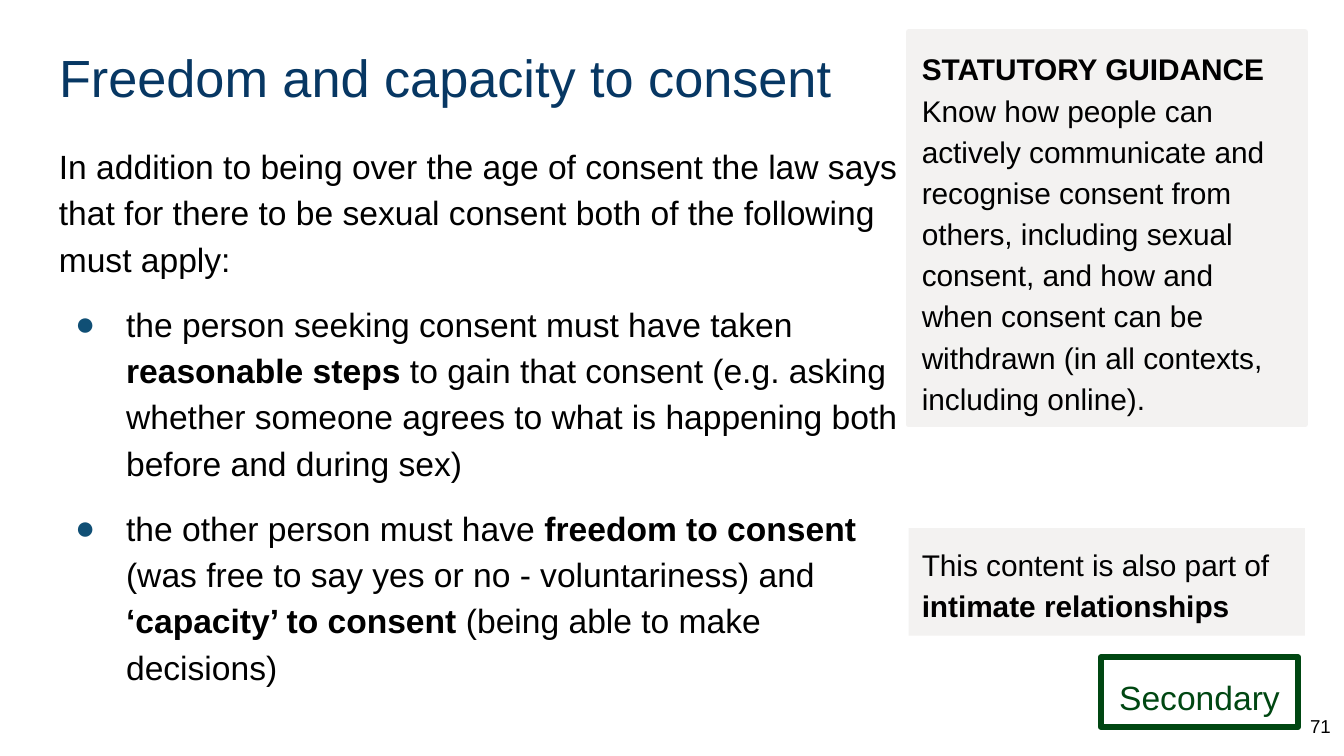
from dataclasses import dataclass

from lxml import etree
from pptx import Presentation
from pptx.dml.color import RGBColor
from pptx.enum import shapes, text
from pptx.oxml import ns
from pptx.util import Inches, Pt

FONT = "Arial"
BLACK, NAVY, BLUE = "000000", "073763", "104F75"
GREY, GREEN = "F3F2F1", "004712"
LEFT, CENTER, RIGHT = text.PP_ALIGN.LEFT, text.PP_ALIGN.CENTER, text.PP_ALIGN.RIGHT


@dataclass
class Para:
    runs: list[tuple[str, bool]]  # wording, bold; a final newline breaks the line
    bullet: bool = False


@dataclass
class Panel:
    box: tuple[float, float, float, float]
    paras: list[Para]
    size: int = 16
    color: str = BLACK
    fill: str | None = None
    line: str | None = None
    align: text.PP_ALIGN = LEFT


def rgb(value: str) -> RGBColor:
    return RGBColor.from_string(value)


def place(sp, box) -> None:
    sp.left, sp.top, sp.width, sp.height = map(Inches, box)


def add_bullet(p) -> None:
    pPr = p._p.get_or_add_pPr()
    pPr.set("marL", str(Inches(0.5)))
    pPr.set("indent", str(-Inches(0.38)))
    color = etree.SubElement(pPr, ns.qn("a:buClr"))
    etree.SubElement(color, ns.qn("a:srgbClr"), val=BLUE)
    etree.SubElement(pPr, ns.qn("a:buFont"), typeface=FONT)
    etree.SubElement(pPr, ns.qn("a:buChar"), char="●")


def write(tf, paras: list[Para], *, size: int, color: str = BLACK,
          align=LEFT, anchor=text.MSO_ANCHOR.TOP, spacing: float = 1.15) -> None:
    tf.word_wrap = True
    tf.auto_size = text.MSO_AUTO_SIZE.NONE
    tf.vertical_anchor = anchor
    tf.margin_left = tf.margin_top = tf.margin_right = tf.margin_bottom = Inches(0.1)
    for i, para in enumerate(paras):
        p = tf.add_paragraph() if i else tf.paragraphs[0]
        p.alignment = align
        p.line_spacing = spacing
        p.space_before = Pt(10 if para.bullet else 0)
        if para.bullet:
            add_bullet(p)
        for wording, bold in para.runs:
            r = p.add_run()
            r.text = wording.rstrip("\n")
            r.font.name, r.font.size, r.font.bold = FONT, Pt(size), bold
            r.font.color.rgb = rgb(color)
            if wording.endswith("\n"):
                p.add_line_break()


def add_text(s, box, paras: list[Para], **fmt) -> None:
    sp = s.shapes.add_textbox(*map(Inches, box))
    write(sp.text_frame, paras, **fmt)


def add_panel(s, panel: Panel) -> None:
    sp = s.shapes.add_shape(shapes.MSO_SHAPE.RECTANGLE, *map(Inches, panel.box))
    sp.shadow.inherit = False
    if panel.fill:
        sp.fill.solid()
        sp.fill.fore_color.rgb = rgb(panel.fill)
    else:
        sp.fill.background()
    if panel.line:
        sp.line.color.rgb = rgb(panel.line)
        sp.line.width = Pt(3)
    else:
        sp.line.fill.background()
    write(sp.text_frame, panel.paras, size=panel.size, color=panel.color, align=panel.align)


BODY = [
    Para([("In addition to being over the age of consent the law says that for there "
           "to be sexual consent both of the following must apply:", False)]),
    Para([("the person seeking consent must have taken ", False),
          ("reasonable steps ", True),
          ("to gain that consent (e.g. asking whether someone agrees to what is "
           "happening both before and during sex)", False)], bullet=True),
    Para([("the other person must have ", False),
          ("freedom to consent ", True),
          ("(was free to say yes or no - voluntariness) and", False),
          (" ‘capacity’ to consent ", True),
          ("(being able to make decisions)", False)], bullet=True),
]

PANELS = [
    Panel((6.76, 0.24, 2.95, 2.92), [
        Para([("STATUTORY GUIDANCE \n", True),
              ("Know how people can actively communicate and recognise consent from "
               "others, including sexual consent, and how and when consent can be "
               "withdrawn (in all contexts, including online).", False)]),
    ], fill=GREY, line=GREY),
    Panel((6.76, 3.93, 2.95, 0.8), [
        Para([("This content is also part of ", False), ("intimate relationships", True)]),
    ], fill=GREY),
    Panel((8.19, 4.89, 1.47, 0.52), [Para([("Secondary", False)])],
          size=18, color=GREEN, line=GREEN, align=CENTER),
]


def main() -> None:
    # Widescreen slide, 16:9
    prs = Presentation()
    prs.slide_width, prs.slide_height = Inches(10), Inches(10 * 9 / 16)
    s = prs.slides.add_slide(prs.slide_layouts[5])

    # Title and body
    title = s.shapes.title
    place(title, (0.34, 0.24, 9.32, 0.63))
    write(title.text_frame, [Para([("Freedom and capacity to consent", False)])],
          size=28, color=NAVY, spacing=1.0)
    add_text(s, (0.34, 0.94, 6.44, 3.74), BODY, size=18)

    # Side panels and phase label
    for panel in PANELS:
        add_panel(s, panel)

    # Page number
    add_text(s, (9.4, 5.19, 0.6, 0.43), [Para([("71", False)])], size=10,
             align=RIGHT, anchor=text.MSO_ANCHOR.MIDDLE, spacing=1.0)

    prs.save("out.pptx")


if __name__ == "__main__":
    main()
